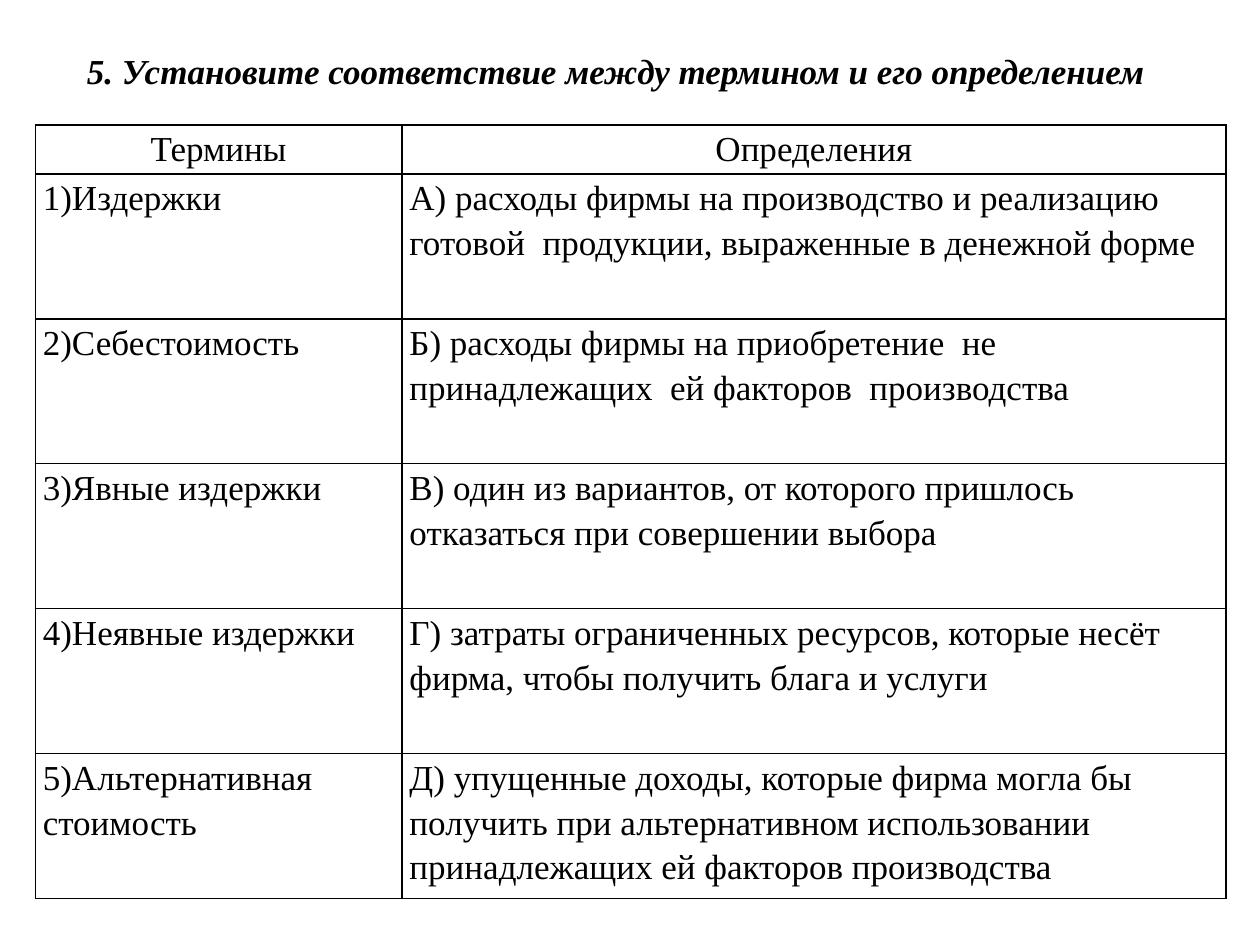
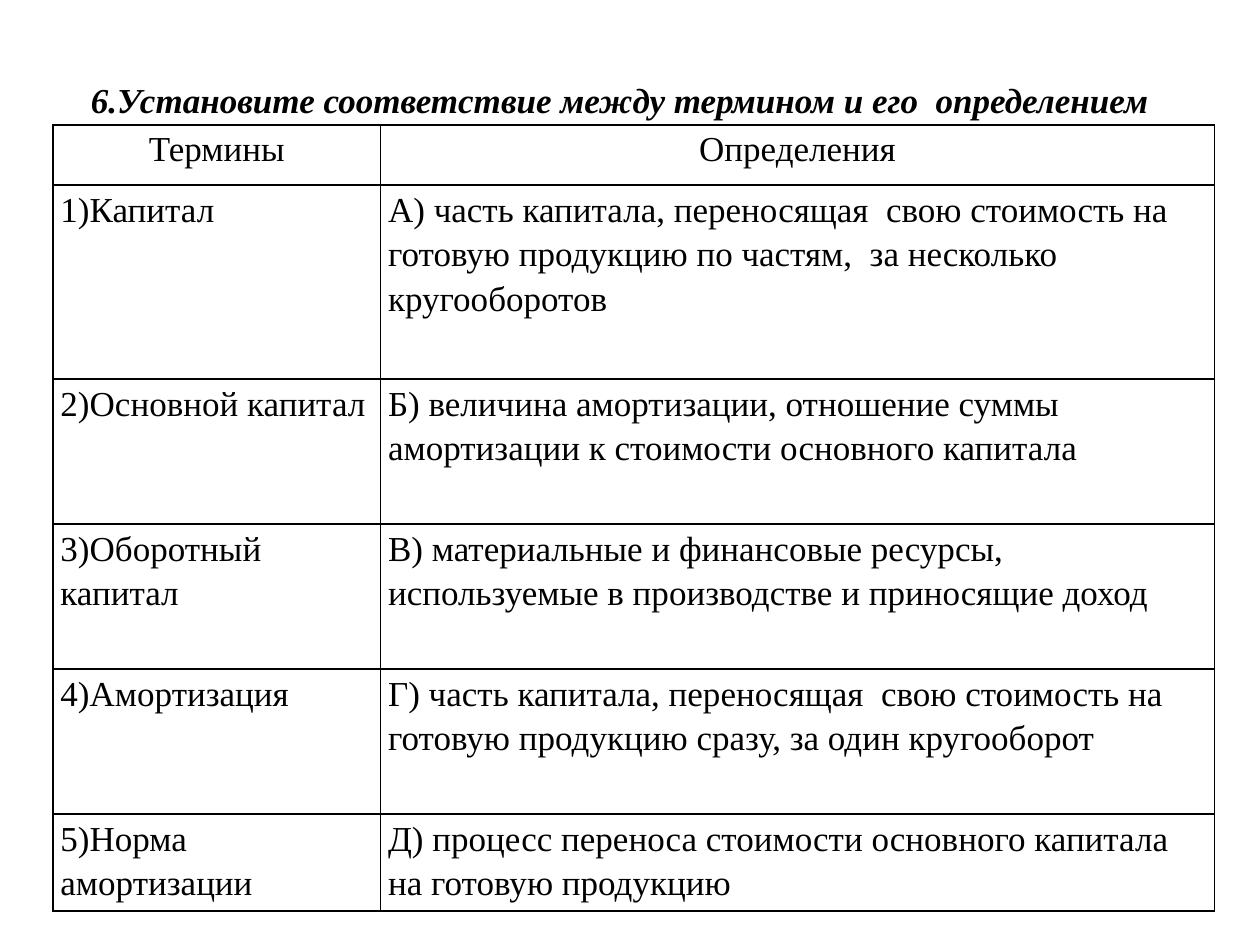
"""Build two matching exercises on economic terms, each a title above a two-column table."""
import lxml.etree
import pptx
import pptx.dml.color
import pptx.enum.text
import pptx.oxml.ns
import pptx.util

ALIGN = pptx.enum.text.PP_ALIGN
INK = "000000"
FONT = "Times New Roman"
TEXT_SIZE = 20
LINE_SPACING = 1.15
TABLE_TOP = 0.99
TITLE_HEIGHT = 0.46
CELL_MARGIN = 0.06
BORDER_WIDTH = 1
HEADER = ("Термины", "Определения")

exercises = [
    {
        "title": "5. Установите соответствие между термином и его определением",
        "title_box": (0.59, 0.29, 8.9),
        "title_align": ALIGN.LEFT,
        "table_left": 0.28,
        "columns": (2.91, 6.54),
        "rows": (0.39, 1.15, 1.15, 1.15, 1.15, 1.15),
        "pairs": [
            ("1)Издержки",
             "А) расходы фирмы на производство и реализацию готовой  продукции, выраженные в денежной форме"),
            ("2)Себестоимость",
             "Б) расходы фирмы на приобретение  не принадлежащих  ей факторов  производства"),
            ("3)Явные издержки",
             "В) один из вариантов, от которого пришлось отказаться при совершении выбора"),
            ("4)Неявные издержки",
             "Г) затраты ограниченных ресурсов, которые несёт фирма, чтобы получить блага и услуги"),
            ("5)Альтернативная стоимость",
             "Д) упущенные доходы, которые фирма могла бы получить при альтернативном использовании "
             "принадлежащих ей факторов производства"),
        ],
    },
    {
        "title": "6.Установите соответствие между термином и его  определением",
        "title_box": (0.43, 0.52, 8.98),
        "title_align": ALIGN.CENTER,
        "table_left": 0.42,
        "columns": (2.6, 6.62),
        "rows": (0.48, 1.54, 1.15, 1.15, 1.15, 0.77),
        "pairs": [
            ("1)Капитал",
             "А) часть капитала, переносящая  свою стоимость на готовую продукцию по частям,  "
             "за несколько кругооборотов"),
            ("2)Основной капитал",
             "Б) величина амортизации, отношение суммы амортизации к стоимости основного капитала"),
            ("3)Оборотный капитал",
             "В) материальные и финансовые ресурсы,  используемые в производстве и приносящие доход"),
            ("4)Амортизация",
             "Г) часть капитала, переносящая  свою стоимость на готовую продукцию сразу, за один кругооборот"),
            ("5)Норма амортизации",
             "Д) процесс переноса стоимости основного капитала на готовую продукцию"),
        ],
    },
]


def write_text(text_frame, text, alignment, emphasis=False):
    paragraph = text_frame.paragraphs[0]
    paragraph.alignment = alignment
    paragraph.line_spacing = LINE_SPACING
    run = paragraph.add_run()
    run.text = text
    run.font.name = FONT
    run.font.size = pptx.util.Pt(TEXT_SIZE)
    run.font.bold = run.font.italic = emphasis
    run.font.color.rgb = pptx.dml.color.RGBColor.from_string(INK)


def add_borders(cell):
    properties = cell._tc.get_or_add_tcPr()
    for position, side in enumerate(("lnL", "lnR", "lnT", "lnB")):
        line = lxml.etree.Element(pptx.oxml.ns.qn(f"a:{side}"), w=str(pptx.util.Pt(BORDER_WIDTH)))
        fill = lxml.etree.SubElement(line, pptx.oxml.ns.qn("a:solidFill"))
        lxml.etree.SubElement(fill, pptx.oxml.ns.qn("a:srgbClr"), val=INK)
        properties.insert(position, line)


presentation = pptx.Presentation()
presentation.slide_width = pptx.util.Inches(10)
presentation.slide_height = pptx.util.Inches(7.5)
title_only = presentation.slide_layouts[5]

for exercise in exercises:
    slide = presentation.slides.add_slide(title_only)

    title = slide.shapes.title
    title.left, title.top, title.width = map(pptx.util.Inches, exercise["title_box"])
    title.height = pptx.util.Inches(TITLE_HEIGHT)
    title.text_frame.word_wrap = True
    title.text_frame.auto_size = pptx.enum.text.MSO_AUTO_SIZE.NONE
    title.text_frame.vertical_anchor = pptx.enum.text.MSO_ANCHOR.TOP
    write_text(title.text_frame, exercise["title"], exercise["title_align"], emphasis=True)

    columns, rows = exercise["columns"], exercise["rows"]
    table = slide.shapes.add_table(
        len(rows), len(columns),
        pptx.util.Inches(exercise["table_left"]), pptx.util.Inches(TABLE_TOP),
        pptx.util.Inches(sum(columns)), pptx.util.Inches(sum(rows)),
    ).table
    table.first_row = table.horz_banding = False
    for column, width in zip(table.columns, columns):
        column.width = pptx.util.Inches(width)
    for row, height in zip(table.rows, rows):
        row.height = pptx.util.Inches(height)

    for row_index, texts in enumerate([HEADER] + exercise["pairs"]):
        for column_index, text in enumerate(texts):
            cell = table.cell(row_index, column_index)
            cell.margin_left = cell.margin_right = pptx.util.Inches(CELL_MARGIN)
            cell.margin_top = cell.margin_bottom = 0
            cell.fill.background()
            add_borders(cell)
            write_text(cell.text_frame, text, ALIGN.LEFT if row_index else ALIGN.CENTER)

presentation.save("out.pptx")
